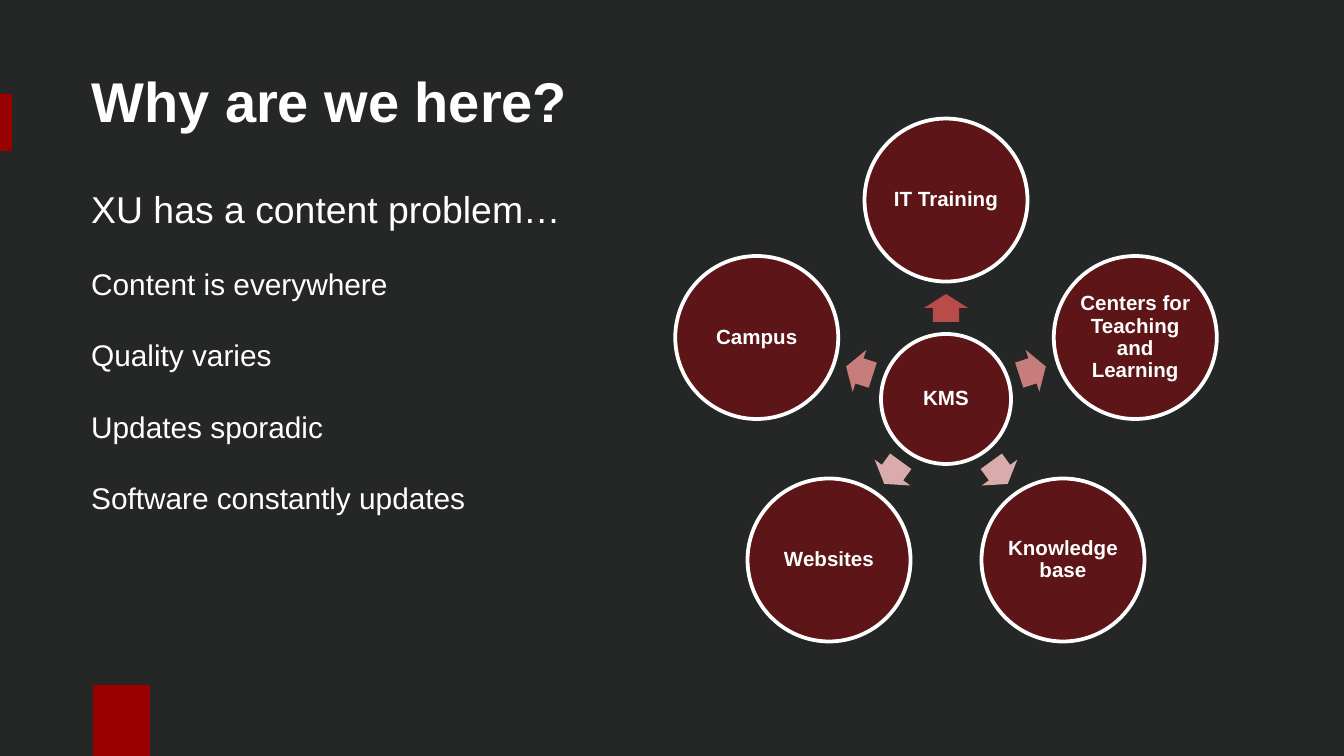
import math

import pptx
import pptx.dml.color
import pptx.enum.shapes
import pptx.enum.text
import pptx.util

RGBColor = pptx.dml.color.RGBColor
SHAPE = pptx.enum.shapes.MSO_SHAPE
ALIGN = pptx.enum.text.PP_ALIGN
ANCHOR = pptx.enum.text.MSO_ANCHOR

CHARCOAL = RGBColor(0x25, 0x26, 0x26)
CRIMSON = RGBColor(0x99, 0x00, 0x00)
MAROON = RGBColor(0x5D, 0x15, 0x17)
WHITE = RGBColor(0xFF, 0xFF, 0xFF)
RED = RGBColor(0xB7, 0x4C, 0x4A)
ROSE = RGBColor(0xC7, 0x7D, 0x7B)
PINK = RGBColor(0xD9, 0xAC, 0xAB)

SCALE = 914400 / 134.4
WIDTH, HEIGHT = 1344, 756
HUB = (946, 399)
HUB_SIZE, SPOKE_SIZE = 130, 163
SPOKE_RADIUS, ARROW_RADIUS = 199, 91
ARROW_SIZE = (28, 44)
SPOKES = [
    ("IT Training", RED),
    ("Centers for Teaching and Learning", ROSE),
    ("Knowledge base", PINK),
    ("Websites", PINK),
    ("Campus", ROSE),
]
POINTS = [
    ("XU has a content problem…", 20),
    ("Content is everywhere", 16),
    ("Quality varies", 16),
    ("Updates sporadic", 16),
    ("Software constantly updates", 16),
]


def emu(px):
    """Turn px into EMU."""
    return pptx.util.Emu(round(px * SCALE))


def assign(target, values):
    """Set each named attribute of the target."""
    for name, value in values.items():
        setattr(target, name, value)


def around(center, width, height):
    """Give the px box of a size centred on a point."""
    return center[0] - width / 2, center[1] - height / 2, width, height


def on_ring(radius, degrees):
    """Give the point at an angle on a ring round the hub."""
    angle = math.radians(degrees)
    return HUB[0] + radius * math.cos(angle), HUB[1] + radius * math.sin(angle)


class Painter:
    """Hold the text style and the current page."""

    def __init__(self, page, font="Arial", ink=WHITE):
        self.page = page
        self.font = font
        self.ink = ink
        page.background.fill.solid()
        page.background.fill.fore_color.rgb = CHARCOAL

    def label(self, para, text, size, bold=False, **layout):
        """Put one formatted span into a paragraph."""
        span = para.add_run()
        span.text = text
        assign(span.font, {"name": self.font, "size": pptx.util.Pt(size), "bold": bold})
        span.font.color.rgb = self.ink
        assign(para, layout)

    def title(self, text, bounds):
        """Place and fill the title placeholder."""
        box = self.page.shapes.title
        assign(box, dict(zip(("left", "top", "width", "height"), map(emu, bounds))))
        box.text_frame.vertical_anchor = ANCHOR.MIDDLE
        self.label(box.text_frame.paragraphs[0], text, 30, True, alignment=ALIGN.LEFT)

    def points(self, items, bounds):
        """Add a text box with one paragraph per item."""
        frame = self.page.shapes.add_textbox(*map(emu, bounds)).text_frame
        frame.word_wrap = True
        for index, (text, size) in enumerate(items):
            para = frame.add_paragraph() if index else frame.paragraphs[0]
            self.label(para, text, size, space_after=pptx.util.Pt(18), line_spacing=1.05)

    def shape(self, kind, bounds, fill):
        """Add a plain filled shape without outline."""
        shape = self.page.shapes.add_shape(kind, *map(emu, bounds))
        shape.shadow.inherit = False
        shape.fill.solid()
        shape.fill.fore_color.rgb = fill
        shape.line.fill.background()
        return shape

    def circle(self, text, center, size):
        """Add an outlined circle with a centred label."""
        circle = self.shape(SHAPE.OVAL, around(center, size, size), MAROON)
        circle.line.color.rgb = WHITE
        circle.line.width = pptx.util.Pt(2)
        frame = circle.text_frame
        sides = ("margin_left", "margin_top", "margin_right", "margin_bottom")
        assign(frame, dict.fromkeys(sides, emu(1)))
        assign(frame, {"word_wrap": True, "vertical_anchor": ANCHOR.MIDDLE})
        self.label(frame.paragraphs[0], text, 11, True, alignment=ALIGN.CENTER, line_spacing=0.9)

    def arrow(self, center, degrees, fill):
        """Add a block arrow turned to an angle."""
        arrow = self.shape(SHAPE.RIGHT_ARROW, around(center, *ARROW_SIZE), fill)
        arrow.adjustments[0] = 0.6
        arrow.adjustments[1] = 0.5
        arrow.rotation = degrees % 360


def main():
    """Build the slide and save it."""
    deck = pptx.Presentation()
    assign(deck, {"slide_width": emu(WIDTH), "slide_height": emu(HEIGHT)})
    painter = Painter(deck.slides.add_slide(deck.slide_layouts[5]))

    painter.shape(SHAPE.RECTANGLE, (0, 94, 12, 57), CRIMSON)
    painter.shape(SHAPE.RECTANGLE, (93, 685, 57, 71), CRIMSON)
    painter.title("Why are we here?", (78, 43, 671, 114))
    painter.points(POINTS, (78, 177, 560, 476))

    painter.circle("KMS", HUB, HUB_SIZE)
    for index, (label, color) in enumerate(SPOKES):
        degrees = index * 360 / len(SPOKES) - 90
        painter.arrow(on_ring(ARROW_RADIUS, degrees), degrees, color)
        painter.circle(label, on_ring(SPOKE_RADIUS, degrees), SPOKE_SIZE)

    deck.save("out.pptx")


if __name__ == "__main__":
    main()
